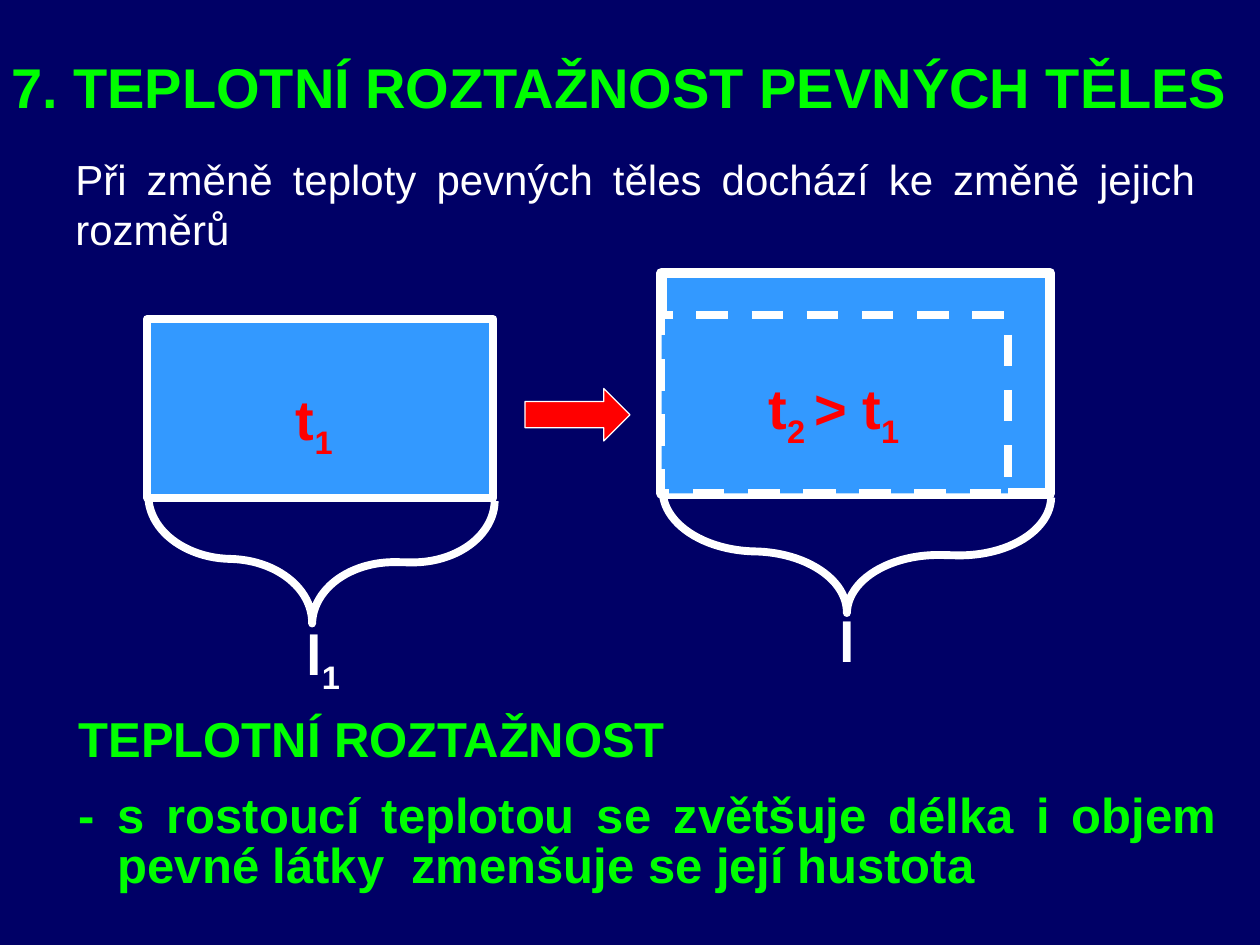
from dataclasses import dataclass
from pptx import Presentation
from pptx.dml.color import RGBColor as Rgb
from pptx.enum.dml import MSO_LINE as Dash
from pptx.enum.shapes import MSO_SHAPE as Kind
from pptx.enum.text import MSO_AUTO_SIZE as Fit, PP_ALIGN as Align
from pptx.util import Inches, Pt


@dataclass(frozen=True)
class Theme:
    font: str = "Arial"
    back: str = "000066"
    white: str = "FFFFFF"
    green: str = "00FF00"
    red: str = "FF0000"
    blue: str = "3399FF"
    big: int = 32
    mid: int = 28
    small: int = 24


class Page:
    """One slide on a grid of 120 columns by 90 rows."""

    def __init__(self, deck, theme):
        self.theme = theme
        self.slide = deck.slides.add_slide(deck.slide_layouts[6])
        self.cell = deck.slide_width / 120
        fill = self.slide.background.fill
        fill.solid()
        fill.fore_color.rgb = Rgb.from_string(theme.back)

    def place(self, box):
        return [round(n * self.cell) for n in box]

    def shape(self, kind, box, fill=None, line=4.5, dash=None):
        item = self.slide.shapes.add_shape(kind, *self.place(box))
        item.shadow.inherit = False
        if fill:
            item.fill.solid()
            item.fill.fore_color.rgb = Rgb.from_string(fill)
        else:
            item.fill.background()
        item.line.color.rgb = Rgb.from_string(self.theme.white)
        item.line.width = Pt(line)
        if dash:
            item.line.dash_style = dash
        return item

    def brace(self, box, depth):
        """Hang a brace of the given depth under a box."""
        x, y, wide, high = box
        left = x + (wide - depth) / 2
        top = y + high + (depth - wide) / 2
        item = self.shape(Kind.RIGHT_BRACE, (left, top, depth, wide))
        item.rotation = 91.1
        item.adjustments[0] = 2.11
        item.adjustments[1] = 0.52

    def text(self, box, paras, size, color, bold=True, align=Align.LEFT,
             wrap=True, hang=False):
        """Each paragraph is a list of runs; a run in a tuple is a subscript."""
        frame = self.slide.shapes.add_textbox(*self.place(box)).text_frame
        frame.word_wrap = wrap
        frame.auto_size = Fit.SHAPE_TO_FIT_TEXT
        for i, runs in enumerate(paras):
            para = frame.add_paragraph() if i else frame.paragraphs[0]
            para.alignment = align
            if i:
                para.space_before = Pt(15)
            if hang:
                para.line_spacing = 0.85
                props = para._p.get_or_add_pPr()
                props.set("marL", str(Inches(0.42)))
                props.set("indent", str(Inches(-0.31)))
            for part in runs:
                low = isinstance(part, tuple)
                run = para.add_run()
                run.text = part[0] if low else part
                font = run.font
                font.name, font.size, font.bold = self.theme.font, Pt(size), bold
                font.color.rgb = Rgb.from_string(color)
                if low:
                    font._element.set("baseline", "-25000")


def main():
    deck = Presentation()
    deck.slide_width, deck.slide_height = Inches(10), Inches(7.5)
    look = Theme()
    page = Page(deck, look)

    # Heading and opening sentence
    page.text((-3, 4.4, 124, 7.6), [["7. TEPLOTNÍ ROZTAŽNOST PEVNÝCH TĚLES"]],
              look.big, look.green, align=Align.CENTER)
    page.text((6, 14, 109, 10.8),
              [["Při změně teploty pevných těles dochází ke změně jejich rozměrů"]],
              look.small, look.white, bold=False, align=Align.JUSTIFY)

    # Warm body and cold body, each with its length
    cold, warm = (14, 30.4, 33, 17), (63, 26, 37, 21)
    bodies = (
        (warm, 6, 11.4, (78.8, 57.2, 3.8, 7.6), ["l"]),
        (cold, 4.5, 12, (28, 58.4, 5.9, 7.6), ["l", ("1",)]),
    )
    for box, line, depth, spot, name in bodies:
        page.shape(Kind.RECTANGLE, box, look.blue, line)
        page.text(spot, [name], look.big, look.white, wrap=False)
        page.brace(box, depth)

    # Temperatures, with the first size dashed inside the warm body
    page.text((27, 36, 8, 7.6), [["t", ("1",)]], look.big, look.red)
    page.shape(Kind.RECTANGLE, (63, 30, 33, 17), look.blue, dash=Dash.DASH)
    page.text((72, 35, 15, 7.6), [["t", ("2 ",), "> t", ("1",)]],
              look.big, look.red)

    # Arrow from cold to warm
    page.shape(Kind.RIGHT_ARROW, (50, 37, 10, 5), look.red, 0.75)

    # Conclusion
    page.text((5, 67.7, 112, 18.4),
              [["TEPLOTNÍ ROZTAŽNOST"],
               ["- s rostoucí teplotou se zvětšuje délka i objem pevné látky"
                "  zmenšuje se její hustota"]],
              look.mid, look.green, align=Align.JUSTIFY, hang=True)

    deck.save("out.pptx")


if __name__ == "__main__":
    main()
